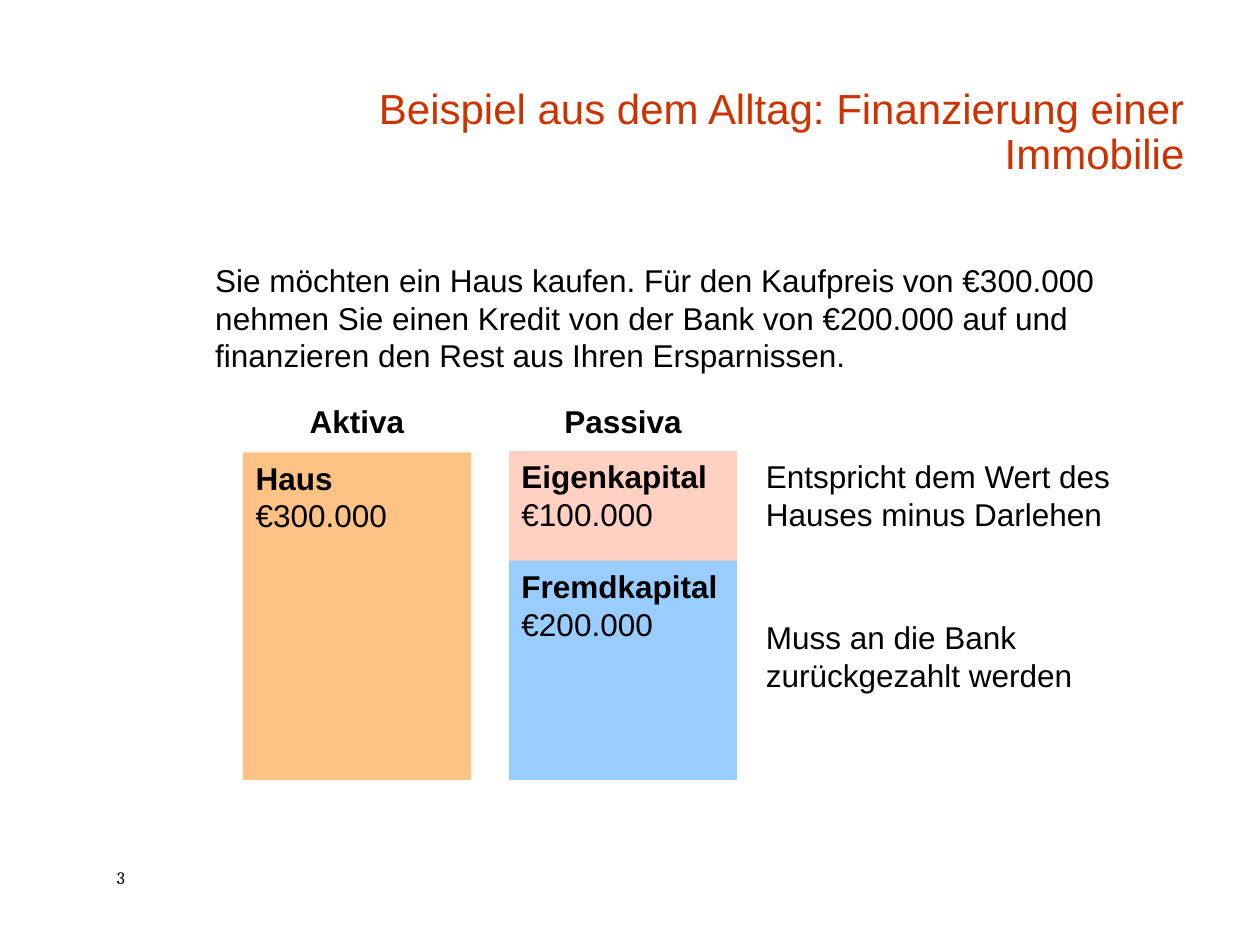
from pptx import Presentation
from pptx.dml.color import RGBColor
from pptx.enum.shapes import MSO_SHAPE
from pptx.enum.text import MSO_ANCHOR, PP_ALIGN
from pptx.util import Inches, Pt

RECT = MSO_SHAPE.RECTANGLE
TOP, BOTTOM = MSO_ANCHOR.TOP, MSO_ANCHOR.BOTTOM
LEFT, RIGHT = PP_ALIGN.LEFT, PP_ALIGN.RIGHT
COLORS = {"title": "CC3300", "text": "000000", "house": "FFC285",
          "equity": "FFD1C2", "debt": "99CCFF"}


def style(p, size=18, bold=False, color="text", font="Arial", align=LEFT):
    p.alignment = align
    p.font.name = font
    p.font.size = Pt(size)
    p.font.bold = bold
    p.font.color.rgb = RGBColor.from_string(COLORS[color])


def add_text(x, y, w, h, text, wrap=True, **fmt):
    tf = s.shapes.add_textbox(Inches(x), Inches(y), Inches(w), Inches(h)).text_frame
    tf.word_wrap = wrap
    tf.text = text
    style(tf.paragraphs[0], **fmt)


prs = Presentation()
prs.slide_width, prs.slide_height = Inches(10), Inches(7.5)
s = prs.slides.add_slide(prs.slide_layouts[5])

title = s.shapes.title
title.left, title.top = Inches(2.09), Inches(0.42)
title.width, title.height = Inches(7.41), Inches(1.05)
tf = title.text_frame
tf.text = "Beispiel aus dem Alltag: Finanzierung einer Immobilie"
tf.vertical_anchor = BOTTOM
p = tf.paragraphs[0]
p.line_spacing = 0.9
style(p, size=24, color="title", align=RIGHT)

add_text(1.61, 2.02, 7.58, 1.05,
         "Sie möchten ein Haus kaufen. Für den Kaufpreis von €300.000 nehmen Sie "
         "einen Kredit von der Bank von €200.000 auf und finanzieren den Rest aus "
         "Ihren Ersparnissen.")

for x, w, heading in [(2.36, 0.96, "Aktiva"), (4.38, 1.15, "Passiva")]:
    add_text(x, 3.14, w, 0.44, heading, wrap=False, bold=True)

blocks = [
    (1.93, 3.59, 2.6, "house", "Haus", "€300.000"),
    (4.04, 3.58, 0.88, "equity", "Eigenkapital", "€100.000"),
    (4.04, 4.45, 1.74, "debt", "Fremdkapital", "€200.000"),
]
for x, y, h, color, name, amount in blocks:
    sp = s.shapes.add_shape(RECT, Inches(x), Inches(y), Inches(1.81), Inches(h))
    sp.shadow.inherit = False
    sp.fill.solid()
    sp.fill.fore_color.rgb = RGBColor.from_string(COLORS[color])
    sp.line.fill.background()
    tf = sp.text_frame
    tf.vertical_anchor = TOP
    tf.word_wrap = True
    tf.text = f"{name}\n{amount}"
    style(tf.paragraphs[0], bold=True)
    style(tf.paragraphs[1])

for y, note in [(3.58, "Entspricht dem Wert des Hauses minus Darlehen"),
                (4.86, "Muss an die Bank zurückgezahlt werden")]:
    add_text(5.98, y, 3.52, 0.77, note)

add_text(0.83, 6.83, 0.67, 0.27, "3", size=10, font="Cambria")

prs.save("out.pptx")
